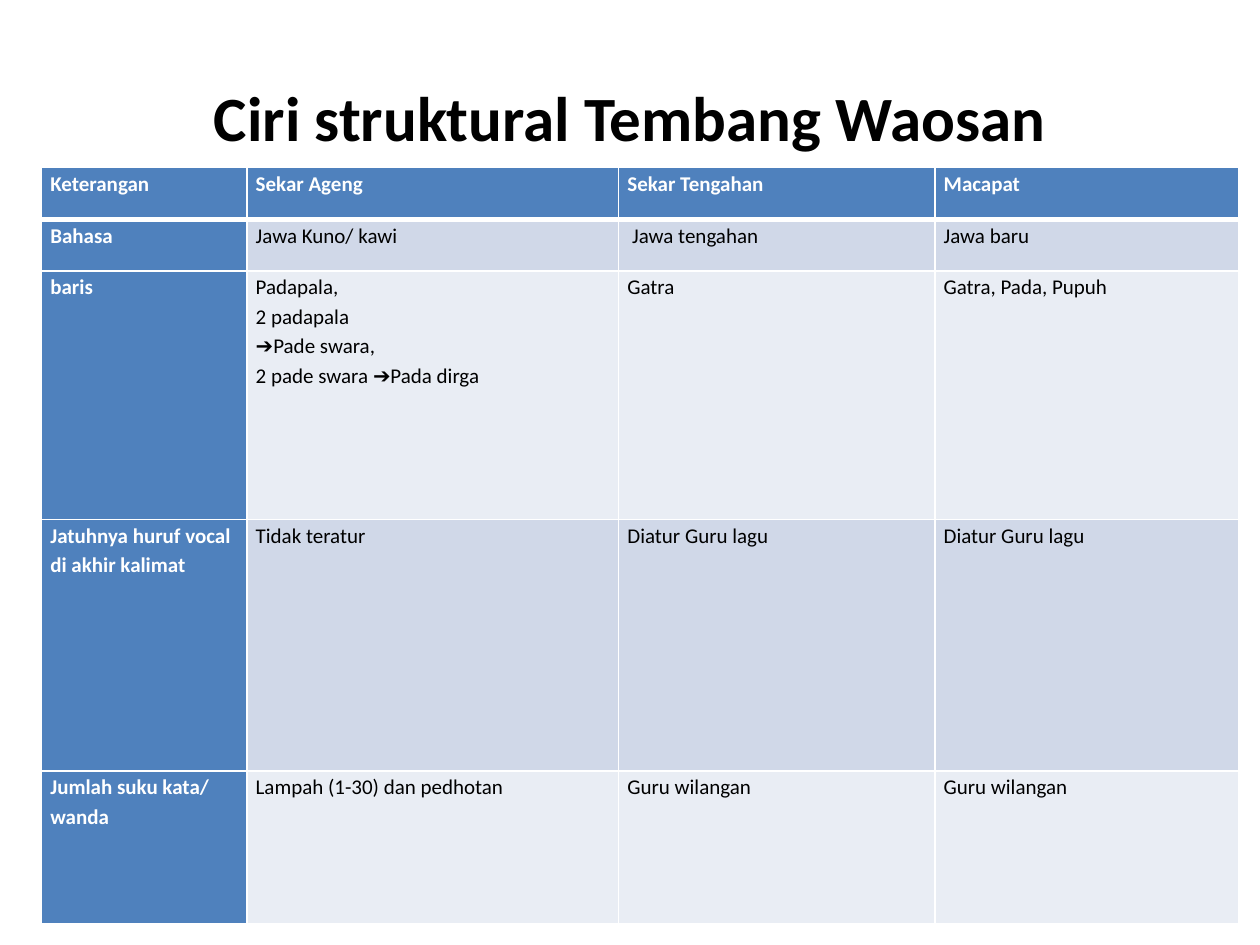
import pptx
import pptx.util
import pptx.dml.color
import pptx.enum.text
import pptx.oxml
import pptx.oxml.ns
import lxml.etree

FONT = "Calibri"
COLORS = {"head": "4F81BD", "odd": "D0D8E8", "even": "E9EDF4",
          "white": "FFFFFF", "black": "000000"}
COLS = [1.63, 2.95, 2.51, 2.41]
ROWS = [0.41, 0.41, 1.97, 1.99, 1.21]
CELLS = [
    ["Keterangan", "Sekar Ageng", "Sekar Tengahan", "Macapat"],
    ["Bahasa", "Jawa Kuno/ kawi", " Jawa tengahan", "Jawa baru"],
    ["baris", "Padapala,\n2 padapala\n➔Pade swara,\n2 pade swara ➔Pada dirga",
     "Gatra", "Gatra, Pada, Pupuh"],
    ["Jatuhnya huruf vocal di akhir kalimat", "Tidak teratur",
     "Diatur Guru lagu", "Diatur Guru lagu"],
    ["Jumlah suku kata/ wanda", "Lampah (1-30) dan pedhotan",
     "Guru wilangan", "Guru wilangan"],
]


def rgb(name):
    return pptx.dml.color.RGBColor.from_string(COLORS[name])


def format_runs(p, size, color, bold):
    for r in p.runs:
        r.font.name = FONT
        r.font.size = pptx.util.Pt(size)
        r.font.bold = bold
        r.font.color.rgb = rgb(color)


def set_borders(cell, bottom):
    tc_pr = cell._tc.get_or_add_tcPr()
    widths = {"lnL": 1, "lnR": 1, "lnT": 1, "lnB": bottom}
    for i, (tag, width) in enumerate(widths.items()):
        ln = lxml.etree.Element(pptx.oxml.ns.qn(f"a:{tag}"), w=str(pptx.util.Pt(width)))
        fill = lxml.etree.SubElement(ln, pptx.oxml.ns.qn("a:solidFill"))
        lxml.etree.SubElement(fill, pptx.oxml.ns.qn("a:srgbClr"), val=COLORS["white"])
        tc_pr.insert(i, ln)


def add_title(slide, box, text):
    sp = slide.shapes.add_textbox(*map(pptx.util.Inches, box))
    tf = sp.text_frame
    tf.word_wrap = True
    tf.vertical_anchor = pptx.enum.text.MSO_ANCHOR.MIDDLE
    tf.text = text
    p = tf.paragraphs[0]
    p.alignment = pptx.enum.text.PP_ALIGN.CENTER
    format_runs(p, 36, "black", True)


def fill_cell(cell, text, row, col):
    is_head = row == 0 or col == 0
    cell.margin_left = cell.margin_right = pptx.util.Inches(0.07)
    cell.margin_top = cell.margin_bottom = 0
    cell.fill.solid()
    cell.fill.fore_color.rgb = rgb("head" if is_head else "odd" if row % 2 else "even")
    set_borders(cell, 3 if row == 0 else 1)
    cell.text_frame.text = text
    for p in cell.text_frame.paragraphs:
        p.line_spacing = 1.15
        format_runs(p, 12, "white" if is_head else "black", is_head)


def add_comparison(slide, box):
    left, top, width, height = box
    sp = slide.shapes.add_table(len(ROWS), len(COLS), *map(pptx.util.Inches, box))
    table = sp.table
    for column, share in zip(table.columns, COLS):
        column.width = pptx.util.Inches(width * share / sum(COLS))
    for row, share in zip(table.rows, ROWS):
        row.height = pptx.util.Inches(height * share / sum(ROWS))
    for i, texts in enumerate(CELLS):
        for j, text in enumerate(texts):
            fill_cell(table.cell(i, j), text, i, j)


def main():
    prs = pptx.Presentation()
    prs.slide_width = pptx.util.Inches(10)
    prs.slide_height = pptx.util.Inches(7.5)
    slide = prs.slides.add_slide(prs.slide_layouts[6])
    add_title(slide, (0.5, 0.3, 9, 1.25), "Ciri struktural Tembang Waosan")
    add_comparison(slide, (0.33, 1.33, 9.5, 6))
    prs.save("out.pptx")


if __name__ == "__main__":
    main()
